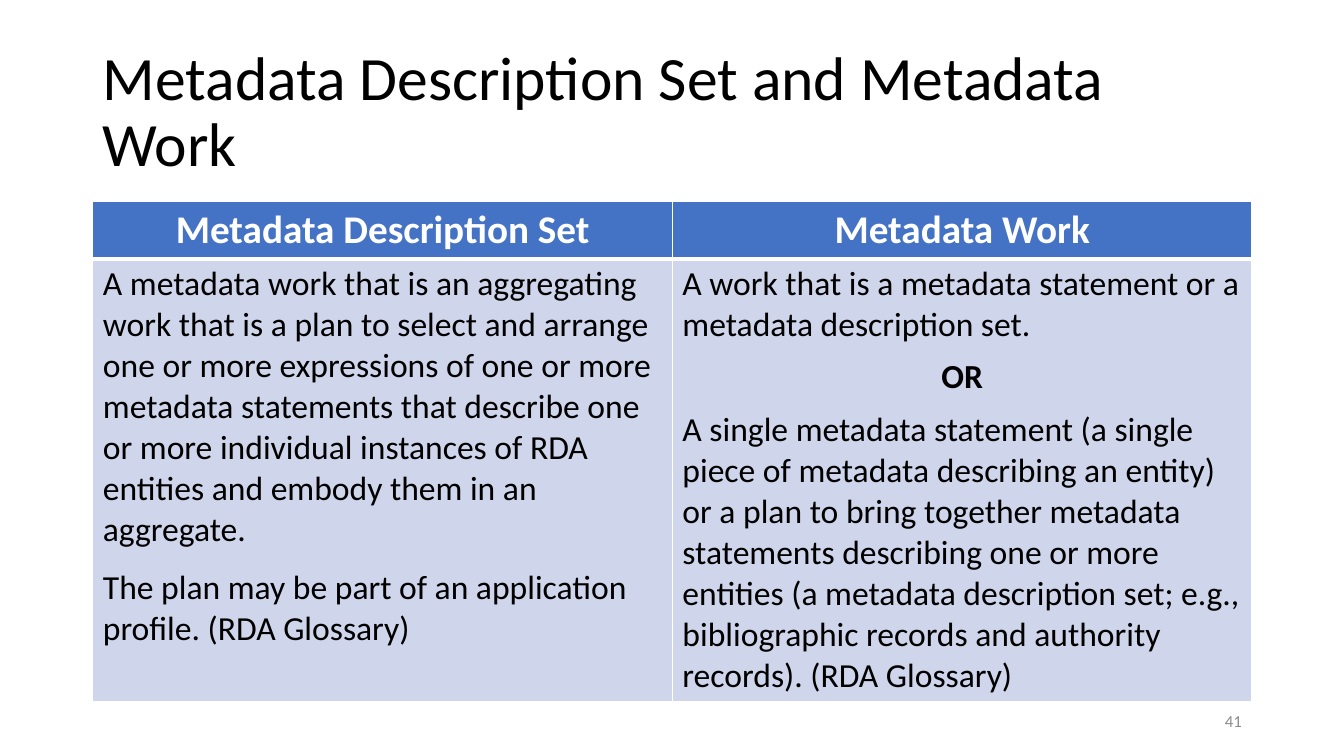
from dataclasses import dataclass

from lxml.etree import SubElement
from pptx import Presentation
from pptx.dml.color import RGBColor
from pptx.enum.text import MSO_ANCHOR, PP_ALIGN
from pptx.oxml.ns import qn
from pptx.util import Cm, Pt


@dataclass(frozen=True)
class Theme:
    """Colours, font and type sizes of the slide."""
    font: str = "Calibri"
    ink: str = "000000"
    white: str = "FFFFFF"
    grey: str = "8C8C8C"
    header_fill: str = "4472C4"
    body_fill: str = "CFD5EA"
    title_size: int = 44
    header_size: int = 28
    body_size: int = 24
    number_size: int = 12
    thin: int = 1
    thick: int = 3


THEME = Theme()
HEADERS = ["Metadata Description Set", "Metadata Work"]
DEFINITIONS = [
    [
        ("A metadata work that is an aggregating work that is a plan to select and "
         "arrange one or more expressions of one or more metadata statements that "
         "describe one or more individual instances of RDA entities and embody them "
         "in an aggregate.", 0, False),
        ("The plan may be part of an application profile. (RDA Glossary)", 12, False),
    ],
    [
        ("A work that is a metadata statement or a metadata description set.", 8, False),
        ("OR", 8, True),
        ("A single metadata statement (a single piece of metadata describing an "
         "entity) or a plan to bring together metadata statements describing one or "
         "more entities (a metadata description set; e.g., bibliographic records and "
         "authority records). (RDA Glossary)", 8, False),
    ],
]


def add_run(p, text, size, color, bold=False):
    """Add a styled run to a paragraph."""
    r = p.add_run()
    r.text = text
    r.font.name = THEME.font
    r.font.size = Pt(size)
    r.font.bold = bold
    r.font.color.rgb = RGBColor.from_string(color)


def add_line_of_text(s, box, text, size, color, align, spacing=1.0):
    """Add a vertically centred text box with one paragraph."""
    tf = s.shapes.add_textbox(*box).text_frame
    tf.word_wrap = True
    tf.vertical_anchor = MSO_ANCHOR.MIDDLE
    p = tf.paragraphs[0]
    p.alignment = align
    p.line_spacing = spacing
    add_run(p, text, size, color)


def style_cell(cell, fill, top, bottom):
    """Give a cell white borders and a solid fill."""
    tc_pr = cell._tc.get_or_add_tcPr()
    widths = {"lnL": THEME.thin, "lnR": THEME.thin, "lnT": top, "lnB": bottom}
    for side, width in widths.items():
        ln = SubElement(tc_pr, qn(f"a:{side}"), w=str(Pt(width)))
        SubElement(SubElement(ln, qn("a:solidFill")), qn("a:srgbClr"), val=THEME.white)
    cell.fill.solid()
    cell.fill.fore_color.rgb = RGBColor.from_string(fill)


def add_comparison(s, box, header_height):
    """Add the two-column table of definitions."""
    left, top, width, height = box
    table = s.shapes.add_table(2, len(HEADERS), left, top, width, height).table
    table.rows[0].height = header_height
    table.rows[1].height = height - header_height
    for col, (header, paragraphs) in enumerate(zip(HEADERS, DEFINITIONS)):
        head, body = table.cell(0, col), table.cell(1, col)
        style_cell(head, THEME.header_fill, THEME.thin, THEME.thick)
        style_cell(body, THEME.body_fill, THEME.thick, THEME.thin)
        p = head.text_frame.paragraphs[0]
        p.alignment = PP_ALIGN.CENTER
        add_run(p, header, THEME.header_size, THEME.white, True)
        tf = body.text_frame
        for i, (text, before, bold) in enumerate(paragraphs):
            p = tf.add_paragraph() if i else tf.paragraphs[0]
            p.alignment = PP_ALIGN.CENTER if bold else PP_ALIGN.LEFT
            p.space_before = Pt(before)
            add_run(p, text, THEME.body_size, THEME.ink, bold)


def main():
    """Build and save the slide."""
    prs = Presentation()
    prs.slide_width, prs.slide_height = Cm(33.87), Cm(19.05)
    s = prs.slides.add_slide(prs.slide_layouts[6])
    left, width = Cm(2.34), Cm(29.21)
    add_line_of_text(s, (left, Cm(1.02), width, Cm(3.68)),
                     "Metadata Description Set and Metadata Work",
                     THEME.title_size, THEME.ink, PP_ALIGN.LEFT, 0.9)
    add_comparison(s, (left, Cm(5.08), width, Cm(12.6)), Cm(1.44))
    number_width = Cm(7.62)
    add_line_of_text(s, (left + width - number_width, Cm(17.65), number_width, Cm(1.02)),
                     "41", THEME.number_size, THEME.grey, PP_ALIGN.RIGHT)
    prs.save("out.pptx")


if __name__ == "__main__":
    main()
